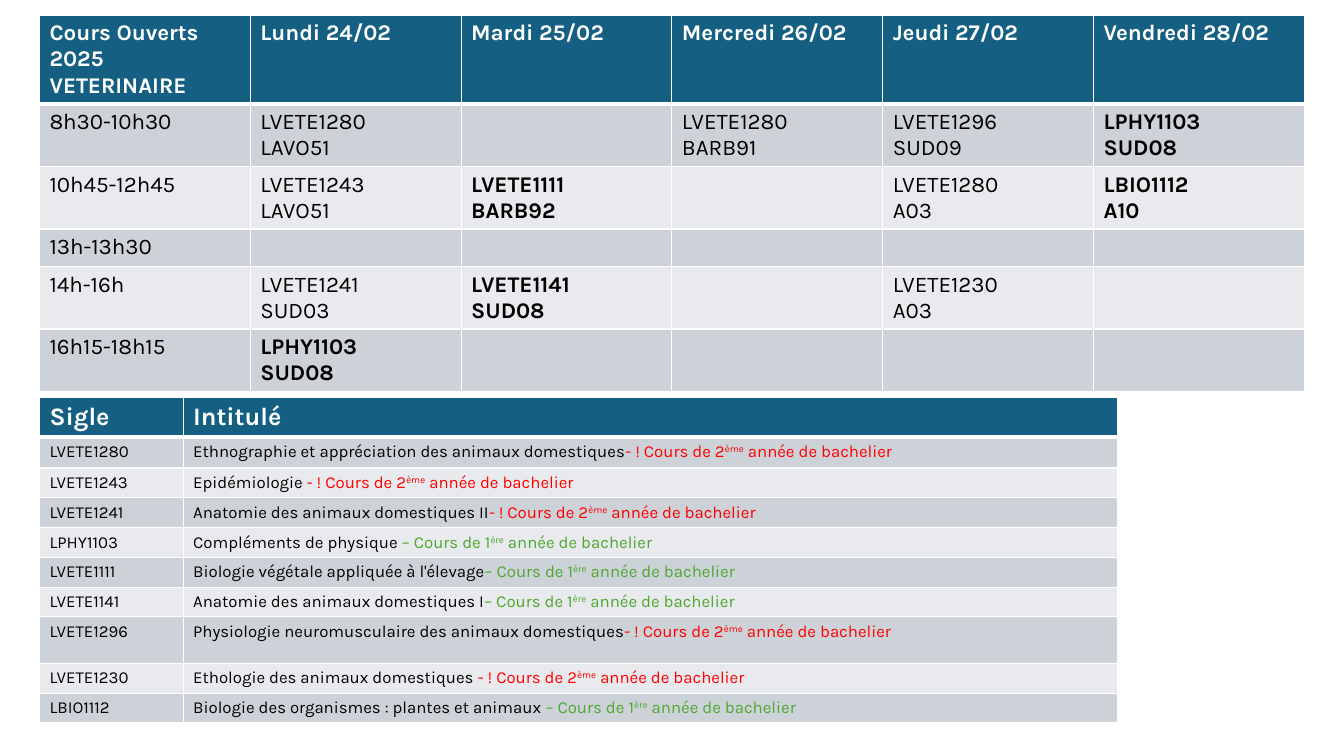
"""Build the weekly timetable slide of open veterinary courses."""
from dataclasses import dataclass

from pptx import Presentation
from pptx.dml.color import RGBColor as RGB
from pptx.oxml.ns import qn
from pptx.util import Pt
from lxml.etree import SubElement, Element


@dataclass(frozen=True)
class Theme:
    font: str = "Karla"
    header: str = "156082"
    bands: tuple = ("CCD2D8", "E8EAED")
    white: str = "FFFFFF"
    black: str = "000000"
    first_year: str = "4EA72E"
    second_year: str = "FF0000"
    timetable_size: int = 16
    title_size: int = 18
    course_size: int = 12


THEME = Theme()
LEFT = 28.2

DAYS = ["Lundi 24/02", "Mardi 25/02", "Mercredi 26/02", "Jeudi 27/02", "Vendredi 28/02"]
TIMETABLE = [
    ("8h30-10h30", "LVETE1280 LAVO51", "", "LVETE1280 BARB91", "LVETE1296 SUD09", "LPHY1103 SUD08"),
    ("10h45-12h45", "LVETE1243 LAVO51", "LVETE1111 BARB92", "", "LVETE1280 A03", "LBIO1112 A10"),
    ("13h-13h30", "", "", "", "", ""),
    ("14h-16h", "LVETE1241 SUD03", "LVETE1141 SUD08", "", "LVETE1230 A03", ""),
    ("16h15-18h15", "LPHY1103 SUD08", "", "", "", ""),
]
COURSES = [
    ("LVETE1280", "Ethnographie et appréciation des animaux domestiques", 2),
    ("LVETE1243", "Epidémiologie ", 2),
    ("LVETE1241", "Anatomie des animaux domestiques II", 2),
    ("LPHY1103", "Compléments de physique ", 1),
    ("LVETE1111", "Biologie végétale appliquée à l'élevage", 1),
    ("LVETE1141", "Anatomie des animaux domestiques I", 1),
    ("LVETE1296", "Physiologie neuromusculaire des animaux domestiques", 2),
    ("LVETE1230", "Ethologie des animaux domestiques ", 2),
    ("LBIO1112", "Biologie des organismes : plantes et animaux ", 1),
]
FIRST_YEAR = {code for code, _, year in COURSES if year == 1}
YEAR_NOTES = {
    1: ("– Cours de 1", "ère", THEME.first_year),
    2: ("- ! Cours de 2", "ème", THEME.second_year),
}


def add_run(p, text, size, color=THEME.black, bold=False, raised=False):
    """Add one formatted run to a paragraph."""
    r = p.add_run()
    r.text = text
    r.font.name = THEME.font
    r.font.size = Pt(size)
    r.font.bold = bold
    r.font.color.rgb = RGB.from_string(color)
    if raised:
        r._r.get_or_add_rPr().set("baseline", "30000")


def set_borders(cell, top, bottom):
    """Give a cell white borders of the given top and bottom widths."""
    tcPr = cell._tc.get_or_add_tcPr()
    widths = {"a:lnL": 1, "a:lnR": 1, "a:lnT": top, "a:lnB": bottom}
    for index, (tag, width) in enumerate(widths.items()):
        ln = Element(qn(tag), w=str(Pt(width)))
        fill = SubElement(ln, qn("a:solidFill"))
        SubElement(fill, qn("a:srgbClr"), val=THEME.white)
        tcPr.insert(index, ln)


def add_grid(slide, top, widths, heights):
    """Add a table with a dark header and banded rows."""
    table = slide.shapes.add_table(len(heights), len(widths), Pt(LEFT), Pt(top),
                                   Pt(sum(widths)), Pt(sum(heights))).table
    for column, width in zip(table.columns, widths):
        column.width = Pt(width)
    for i, (row, height) in enumerate(zip(table.rows, heights)):
        row.height = Pt(height)
        for cell in row.cells:
            cell.fill.solid()
            color = THEME.bands[(i - 1) % 2] if i else THEME.header
            cell.fill.fore_color.rgb = RGB.from_string(color)
            set_borders(cell, 3 if i == 1 else 1, 3 if i == 0 else 1)
    return table


def fill_header(table, titles, size):
    """Write the header titles, one paragraph per line."""
    for cell, title in zip(table.rows[0].cells, titles):
        tf = cell.text_frame
        for i, line in enumerate(title.split("\n")):
            p = tf.add_paragraph() if i else tf.paragraphs[0]
            add_run(p, line, size, THEME.white, bold=True)


def fill_slot(cell, entry):
    """Write a time, or a course code above its room."""
    p = cell.text_frame.paragraphs[0]
    size = THEME.timetable_size
    if not entry:
        p._p.get_or_add_endParaRPr().set("sz", str(size * 100))
        return
    code, *rooms = entry.split()
    bold = code in FIRST_YEAR
    add_run(p, code, size, bold=bold)
    for room in rooms:
        p.add_line_break()
        p._p[-1].append(Element(qn("a:rPr"), sz=str(size * 100)))
        add_run(p, room, size, bold=bold)


def fill_course(cells, code, title, year):
    """Write a course code, its title and its coloured year note."""
    size = THEME.course_size
    add_run(cells[0].text_frame.paragraphs[0], code, size)
    p = cells[1].text_frame.paragraphs[0]
    note, suffix, color = YEAR_NOTES[year]
    add_run(p, title, size)
    add_run(p, note, size, color)
    add_run(p, suffix, size, color, raised=True)
    add_run(p, " année de bachelier", size, color)


def main():
    """Build and save the slide."""
    prs = Presentation()
    prs.slide_width, prs.slide_height = Pt(960), Pt(540)
    slide = prs.slides.add_slide(prs.slide_layouts[6])

    timetable = add_grid(slide, 10.8, [150.6] * 6, [62.8, 44.8, 44.6, 26, 44.6, 44.6])
    fill_header(timetable, ["Cours Ouverts 2025\nVETERINAIRE", *DAYS], THEME.timetable_size)
    for i, entries in enumerate(TIMETABLE, 1):
        for cell, entry in zip(timetable.rows[i].cells, entries):
            fill_slot(cell, entry)

    courses = add_grid(slide, 283.7, [102.6, 667.8], [28.2, 22.3, *[21.2] * 5, 33.2, 21.2, 21.2])
    fill_header(courses, ["Sigle", "Intitulé"], THEME.title_size)
    for i, course in enumerate(COURSES, 1):
        fill_course(list(courses.rows[i].cells), *course)

    prs.save("out.pptx")


if __name__ == "__main__":
    main()
